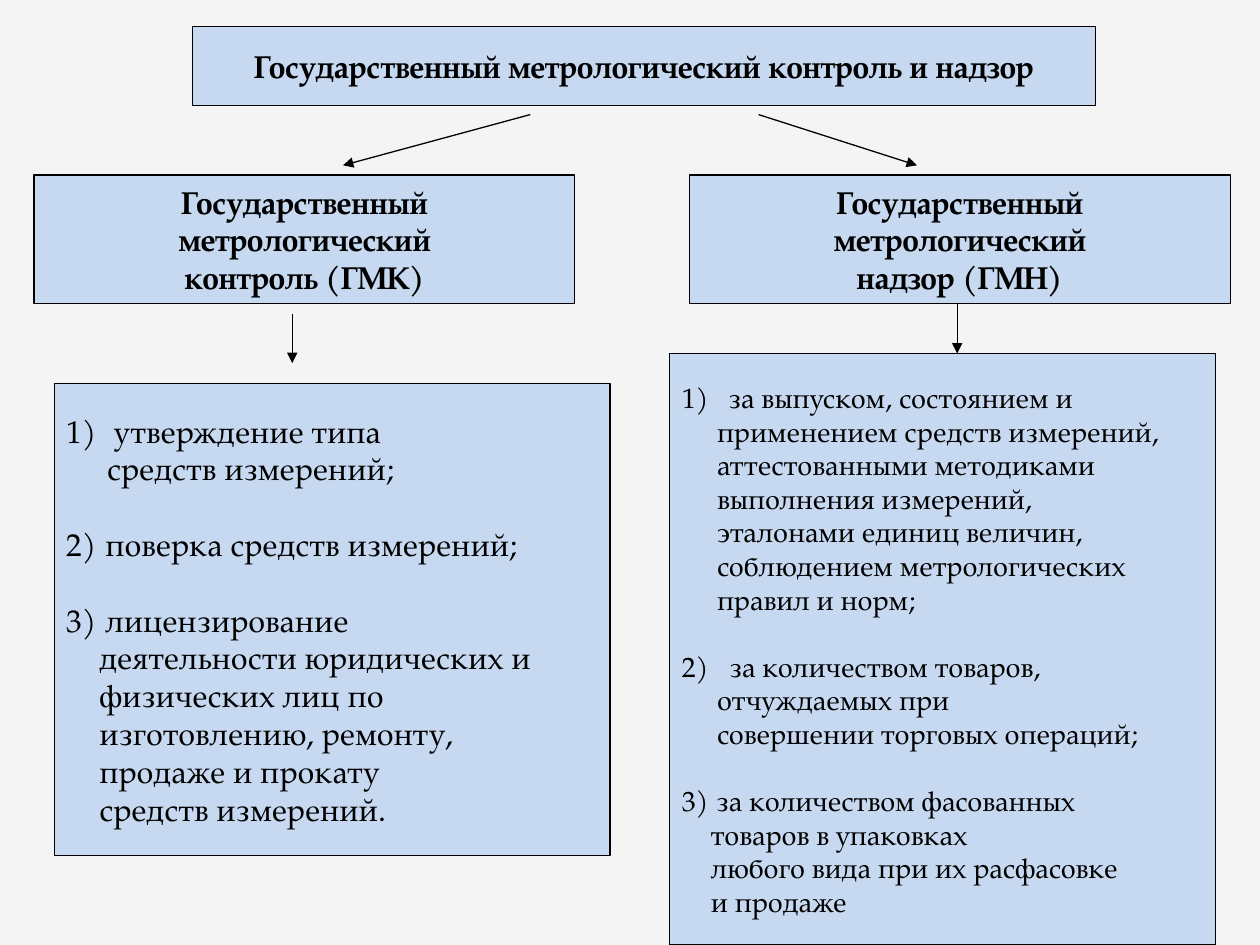
from collections import namedtuple
from dataclasses import dataclass

from lxml.etree import SubElement
from pptx import Presentation
from pptx.dml.color import RGBColor
from pptx.enum.shapes import MSO_CONNECTOR as Connector
from pptx.enum.text import MSO_ANCHOR as Anchor, MSO_AUTO_SIZE as AutoSize, PP_ALIGN as Align
from pptx.oxml.ns import qn
from pptx.util import Pt

Box = namedtuple("Box", "left top width height")
Item = namedtuple("Item", "hang indent lines")


@dataclass(frozen=True)
class Theme:
    font: str = "TeX Gyre Pagella"
    background: RGBColor = RGBColor(0xF4, 0xF4, 0xF4)
    panel: RGBColor = RGBColor(0xC6, 0xD9, 0xF1)
    ink: RGBColor = RGBColor(0, 0, 0)
    heading_size: float = 18
    control_size: float = 18
    supervision_size: float = 16
    line_width: float = 0.75
    line_height: float = 1.2


THEME = Theme()

CONTROL_ITEMS = [
    Item(27, 23, ["утверждение типа", "средств измерений;"]),
    Item(22, 22, ["поверка средств измерений;"]),
    Item(22, 18.5, [
        "лицензирование",
        "деятельности юридических и",
        "физических лиц по",
        "изготовлению, ремонту,",
        "продаже и прокату",
        "средств измерений.",
    ]),
]
SUPERVISION_ITEMS = [
    Item(26.5, 20, [
        "за выпуском, состоянием и",
        "применением средств измерений,",
        "аттестованными методиками",
        "выполнения измерений,",
        "эталонами единиц величин,",
        "соблюдением метрологических",
        "правил и норм;",
    ]),
    Item(27, 20, [
        "за количеством товаров,",
        "отчуждаемых при",
        "совершении торговых операций;",
    ]),
    Item(19.5, 16.5, [
        "за количеством фасованных",
        "товаров в упаковках",
        "любого вида при их расфасовке",
        "и продаже",
    ]),
]


def format_panel(panel, box):
    panel.left, panel.top, panel.width, panel.height = map(Pt, box)
    panel.fill.solid()
    panel.fill.fore_color.rgb = THEME.panel
    panel.line.color.rgb = THEME.ink
    panel.line.width = Pt(THEME.line_width)
    frame = panel.text_frame
    frame.auto_size = AutoSize.NONE
    frame.word_wrap = True
    frame.vertical_anchor = Anchor.MIDDLE


def format_line(paragraph, size, bold, align):
    paragraph.alignment = align
    paragraph.space_before = Pt(0)
    for run in paragraph.runs:
        run.font.name = THEME.font
        run.font.size = Pt(size)
        run.font.bold = bold
        run.font.color.rgb = THEME.ink


def draw_heading(placeholder, box, lines):
    format_panel(placeholder, box)
    placeholder.text_frame.text = "\n".join(lines)
    for paragraph in placeholder.text_frame.paragraphs:
        format_line(paragraph, THEME.heading_size, True, Align.CENTER)


def indent_line(paragraph, margin, number=None):
    properties = paragraph._p.get_or_add_pPr()
    properties.set("marL", str(Pt(margin)))
    properties.set("indent", str(-Pt(margin) if number else 0))
    if number:
        SubElement(properties, qn("a:buFont"), typeface=THEME.font)
        SubElement(properties, qn("a:buAutoNum"), type="arabicParenR", startAt=str(number))
    else:
        SubElement(properties, qn("a:buNone"))


def draw_list(placeholder, box, items, size):
    format_panel(placeholder, box)
    frame = placeholder.text_frame
    frame.text = "\n".join(line for item in items for line in item.lines)
    paragraphs = iter(frame.paragraphs)
    for number, item in enumerate(items, 1):
        for position in range(len(item.lines)):
            paragraph = next(paragraphs)
            format_line(paragraph, size, False, Align.LEFT)
            if position:
                indent_line(paragraph, item.indent)
            else:
                if number > 1:
                    paragraph.space_before = Pt(size * THEME.line_height)
                indent_line(paragraph, item.hang, number)


def draw_arrow(slide, start, end):
    arrow = slide.shapes.add_connector(Connector.STRAIGHT, *map(Pt, (*start, *end)))
    arrow.line.color.rgb = THEME.ink
    arrow.line.width = Pt(THEME.line_width)
    SubElement(arrow.line._get_or_add_ln(), qn("a:tailEnd"), type="triangle")
    SubElement(arrow._element.spPr, qn("a:effectLst"))


def draw_root(slide, box):
    draw_heading(slide.shapes.title, box, ["Государственный метрологический контроль и надзор"])
    bottom = box.top + box.height
    for start, end in ((193, 86), (323.5, 414)):
        draw_arrow(slide, (box.left + start, bottom + 5), (box.left + end, bottom + 34))


def draw_branch(slide, slot, box, heading, list_box, items, size, arrow):
    draw_heading(slide.placeholders[slot], box, heading)
    draw_list(slide.placeholders[slot + 1], list_box, items, size)
    offset, gap, length = arrow
    x, y = box.left + offset, box.top + box.height + gap
    draw_arrow(slide, (x, y), (x, y + length))


def main():
    deck = Presentation()
    deck.slide_width, deck.slide_height = Pt(720), Pt(540)
    slide = deck.slides.add_slide(deck.slide_layouts.get_by_name("Comparison"))
    slide.background.fill.solid()
    slide.background.fill.fore_color.rgb = THEME.background
    for placeholder in list(slide.placeholders):
        if placeholder.placeholder_format.idx > 4:
            placeholder._element.getparent().remove(placeholder._element)

    draw_root(slide, Box(110, 15, 516, 45.5))
    draw_branch(
        slide, 1, Box(19.5, 100, 309, 73.5),
        ["Государственный", "метрологический", "контроль (ГМК)"],
        Box(31, 219, 317.5, 270), CONTROL_ITEMS, THEME.control_size, (147.5, 6, 28),
    )
    draw_branch(
        slide, 3, Box(394, 100, 309, 73.5),
        ["Государственный", "метрологический", "надзор (ГМН)"],
        Box(382.5, 202, 312, 338), SUPERVISION_ITEMS, THEME.supervision_size, (153, 0, 28.5),
    )
    deck.save("out.pptx")


if __name__ == "__main__":
    main()
